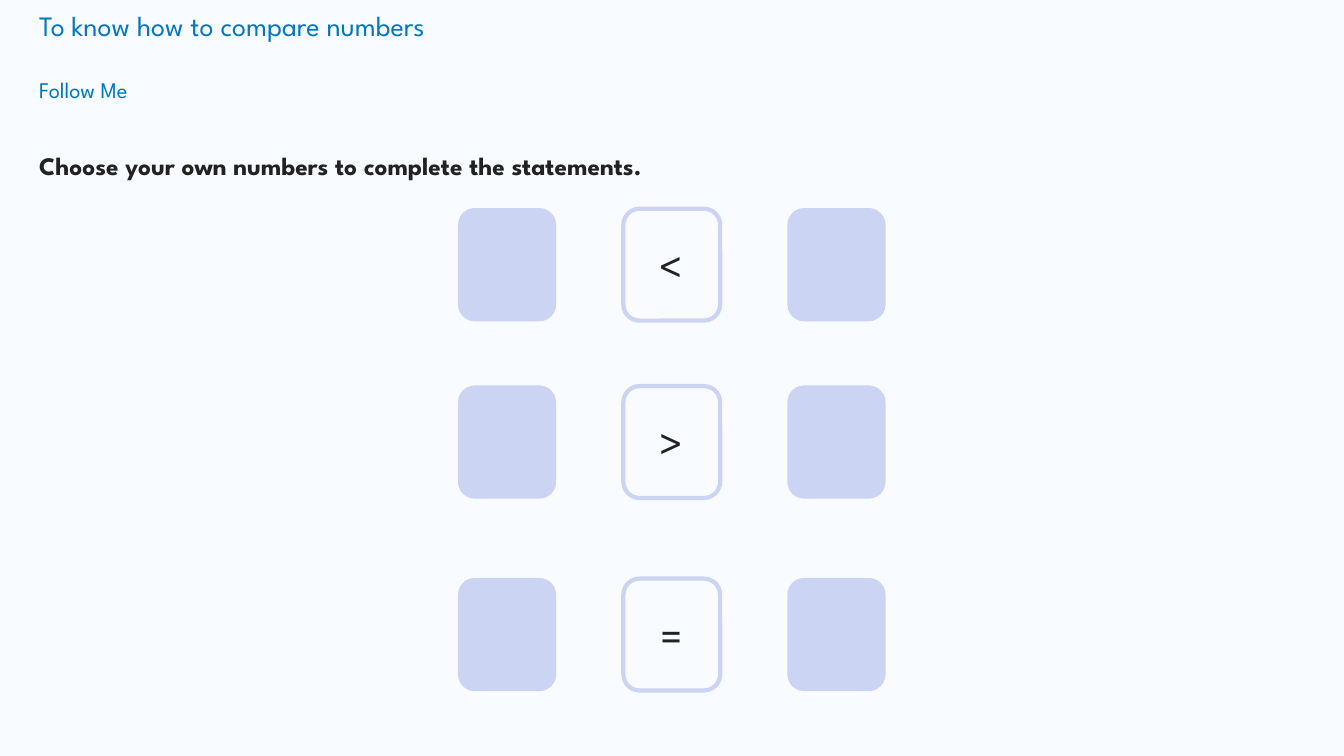
from pptx import Presentation
from pptx.dml.color import RGBColor
from pptx.enum.shapes import MSO_SHAPE as Shape
from pptx.enum.text import MSO_ANCHOR as Anchor, PP_ALIGN as Align
from pptx.util import Cm, Pt

# Content: text, (left, top, width, height) in cm, style, line spacing
HEADINGS = [
    ("To know how to compare numbers", (0.74, 0.1, 31.34, 1.12), "title", 1.0),
    ("Follow Me", (0.74, 1.8, 7.54, 1.17), "section", 1.0),
    ("Choose your own numbers to complete the statements.",
     (0.74, 3.28, 32.61, 1.75), "task", 1.5),
]
# Comparison sign and the top of its row in cm
STATEMENTS = [("<", 5.26), (">", 9.73), ("=", 14.58)]

THEME = {
    "font": "League Spartan",
    "background": RGBColor.from_string("F8FBFF"),
    "card": RGBColor.from_string("CCD4F4"),
    # size, colour, bold
    "title": (20, RGBColor.from_string("0277BD"), False),
    "section": (16, RGBColor.from_string("0277BD"), False),
    "task": (18, RGBColor.from_string("222222"), True),
    "sign": (32, RGBColor.from_string("222222"), False),
}

CARD_WIDTH, CARD_HEIGHT = 2.44, 2.82
FIRST_LEFT, COLUMN_STEP = 11.56, 4.15


def write(shape, text, style):
    shape.text_frame.word_wrap = True
    para = shape.text_frame.paragraphs[0]
    para.text = text
    size, colour, bold = THEME[style]
    para.font.name = THEME["font"]
    para.font.size = Pt(size)
    para.font.bold = bold
    para.font.color.rgb = colour
    return para


def add_card(page, column, top, sign=None):
    """Add a filled number card, or an outlined card when a sign is given."""
    left = FIRST_LEFT + column * COLUMN_STEP
    card = page.shapes.add_shape(Shape.ROUNDED_RECTANGLE, Cm(left), Cm(top),
                                 Cm(CARD_WIDTH), Cm(CARD_HEIGHT))
    card.adjustments[0] = 0.167
    card.shadow.inherit = False
    card.line.color.rgb = THEME["card"]
    card.line.width = Pt(3 if sign else 1)
    if sign:
        card.fill.background()
        card.text_frame.vertical_anchor = Anchor.MIDDLE
        write(card, sign, "sign").alignment = Align.CENTER
    else:
        card.fill.solid()
        card.fill.fore_color.rgb = THEME["card"]


def main():
    deck = Presentation()
    deck.slide_width, deck.slide_height = Cm(33.87), Cm(19.05)
    page = deck.slides.add_slide(deck.slide_layouts[6])
    page.background.fill.solid()
    page.background.fill.fore_color.rgb = THEME["background"]

    for text, place, style, spacing in HEADINGS:
        box = page.shapes.add_textbox(*map(Cm, place))
        write(box, text, style).line_spacing = spacing

    for sign, top in STATEMENTS:
        for column, label in enumerate((None, sign, None)):
            add_card(page, column, top, label)

    deck.save("out.pptx")


if __name__ == "__main__":
    main()
